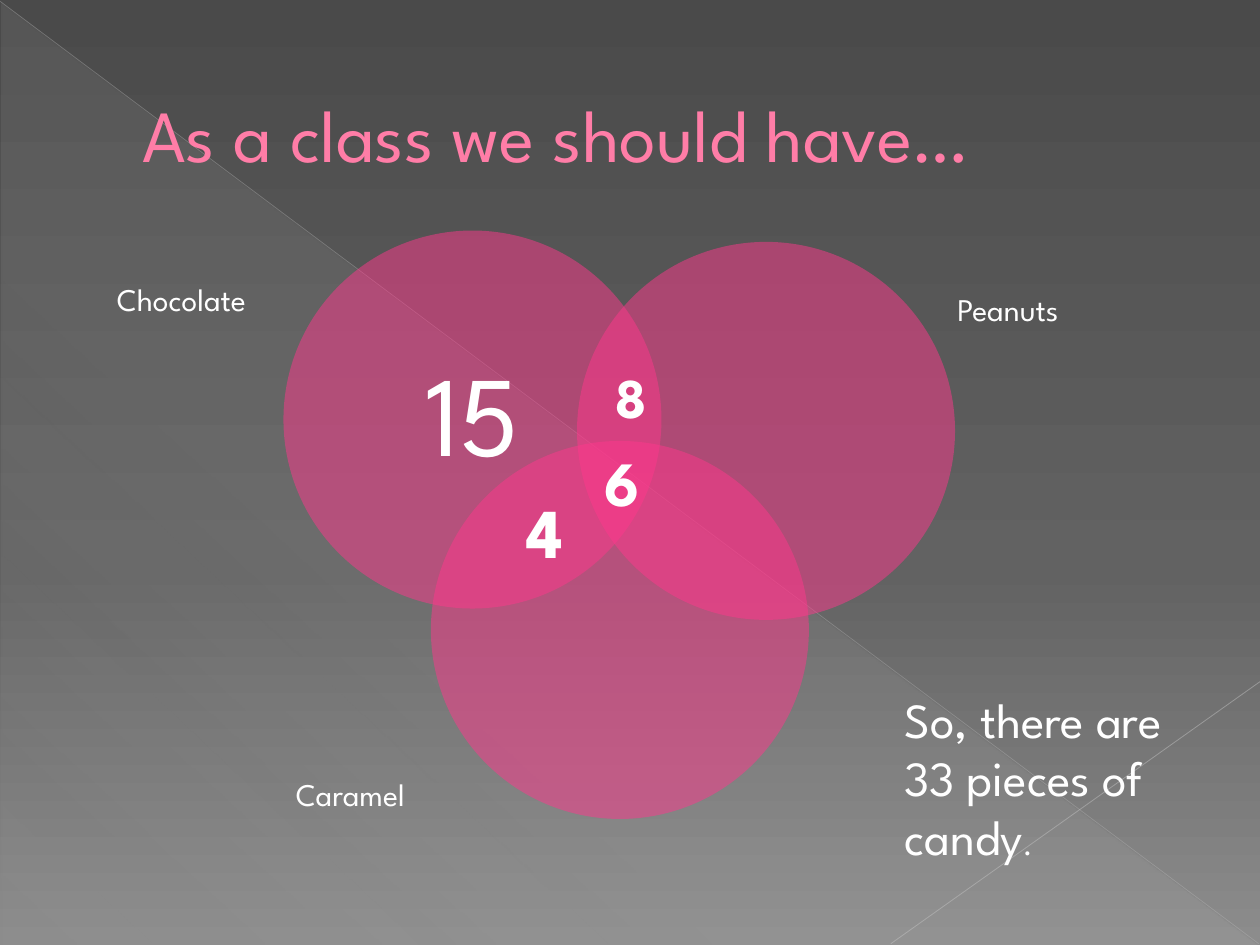
from pptx import Presentation
from pptx.dml.color import RGBColor
from pptx.enum.shapes import MSO_CONNECTOR, MSO_SHAPE
from pptx.enum.text import MSO_ANCHOR, PP_ALIGN
from pptx.oxml.ns import qn
from pptx.util import Inches, Pt
from lxml.etree import SubElement

FONT = "League Spartan"
WHITE = "FFFFFF"
PINK = "FF388C"
TITLE_PINK = "FF7DA7"


def color(value):
    return RGBColor.from_string(value)


def set_opacity(element, percent):
    for node in element.xpath(".//a:solidFill/a:srgbClr"):
        SubElement(node, qn("a:alpha")).set("val", str(percent * 1000))


def set_gradient(fill, element, stops, angle):
    fill.gradient()
    gradient = element.xpath(".//a:gradFill")[0]
    for child in list(gradient):
        gradient.remove(child)
    stop_list = SubElement(gradient, qn("a:gsLst"))
    for position, value, opacity in stops:
        stop = SubElement(stop_list, qn("a:gs"), pos=str(position * 1000))
        node = SubElement(stop, qn("a:srgbClr"), val=value)
        SubElement(node, qn("a:alpha"), val=str(opacity * 1000))
    SubElement(gradient, qn("a:lin"), ang=str(angle * 60000), scaled="0")


def add_text(shapes, box, runs, bold=False, text_color=WHITE):
    shape = shapes.add_textbox(*map(Inches, box))
    frame = shape.text_frame
    frame.word_wrap = True
    paragraph = frame.paragraphs[0]
    for text, size in runs:
        run = paragraph.add_run()
        run.text = text
        run.font.name = FONT
        run.font.size = Pt(size)
        run.font.bold = bold
        run.font.color.rgb = color(text_color)
    return frame


def add_plain_shape(shapes, kind, box):
    shape = shapes.add_shape(kind, *map(Inches, box))
    shape.shadow.inherit = False
    shape.line.fill.background()
    return shape


def add_line(shapes, start, end, line_color, width, opacity):
    line = shapes.add_connector(MSO_CONNECTOR.STRAIGHT, *map(Inches, start + end))
    line.line.color.rgb = color(line_color)
    line.line.width = Pt(width)
    properties = line._element.spPr
    set_opacity(properties, opacity)
    SubElement(properties, qn("a:effectLst"))


def add_backdrop(slide, box):
    left, top, width, height = box
    set_gradient(slide.background.fill, slide._element,
                 [(0, "4A4A4A", 100), (60, "626262", 100), (100, "8C8C8C", 100)], 90)
    triangle = add_plain_shape(slide.shapes, MSO_SHAPE.RIGHT_TRIANGLE,
                               (left + 0.01, top + 0.02, width - 0.02, height - 0.02))
    set_gradient(triangle.fill, triangle._element.spPr,
                 [(0, "D2D2D2", 10), (70, "D2D2D2", 8), (100, "D2D2D2", 1)], 133)
    right, bottom = left + width, top + height - 0.01
    add_line(slide.shapes, (left, top + 0.01), (right - 0.01, bottom), "BFBFBF", 0.39, 35)
    add_line(slide.shapes, (right, top + 5.41), (left + 7.07, bottom), "C6C6C6", 0.47, 45)


def add_title(slide, box):
    frame = add_text(slide.shapes, box, [("As a class we should have…", 42)],
                     text_color=TITLE_PINK)
    frame.vertical_anchor = MSO_ANCHOR.MIDDLE
    frame.paragraphs[0]._p.get_or_add_pPr().set("marL", str(Inches(0.53)))


def add_circle(shapes, box):
    circle = add_plain_shape(shapes, MSO_SHAPE.OVAL, box)
    circle.fill.solid()
    circle.fill.fore_color.rgb = color(PINK)
    set_opacity(circle._element.spPr, 50)


def add_circle_count(shapes, box, text):
    frame = add_text(shapes, box, [(text, 65)])
    frame.vertical_anchor = MSO_ANCHOR.MIDDLE
    frame.margin_left = frame.margin_right = Inches(0.27)
    frame.margin_top = frame.margin_bottom = Inches(0.27)
    frame.paragraphs[0].alignment = PP_ALIGN.CENTER
    frame.paragraphs[0].line_spacing = 0.9


def add_venn(slide, box):
    left, top, diameter = box
    circles = slide.shapes.add_group_shape().shapes
    add_circle(circles, (left, top, diameter, diameter))
    inset = 0.44
    side = diameter - 2 * inset
    add_circle_count(circles, (left + inset, top + inset, side, side), "15")
    for across, down in [(1.17, 1.67), (2.33, 0.09)]:
        add_circle(circles, (left + across, top + down, diameter, diameter))

    overlaps = [("8", 32, (2.54, 1, 0.25, 0.64)),
                ("6", 36, (2.45, 1.64, 0.38, 0.71)),
                ("4", 40, (1.83, 2, 0.33, 0.77))]
    labels = [("Chocolate", 18, (-1.42, 0.34, 1.58, 0.4)),
              ("Peanuts", 18, (5.25, 0.42, 1.67, 0.4)),
              ("Caramel", 18, (0, 4.27, 1.5, 0.4))]
    for items, bold in [(overlaps, True), (labels, False)]:
        for text, size, (across, down, width, height) in items:
            add_text(slide.shapes, (left + across, top + down, width, height),
                     [(text, size)], bold)


def add_conclusion(slide, box):
    add_text(slide.shapes, box, [("So, there are 33 pieces of candy", 28), (".", 18)])


def main():
    presentation = Presentation()
    presentation.slide_width = Inches(10)
    presentation.slide_height = Inches(7.5)
    slide = presentation.slides.add_slide(presentation.slide_layouts[6])
    add_backdrop(slide, (0, 0, 10, 7.5))
    add_title(slide, (0.5, 0.29, 9, 1.53))
    add_venn(slide, (2.25, 1.83, 3))
    add_conclusion(slide, (7.08, 5.42, 2.33, 1.99))
    presentation.save("out.pptx")


if __name__ == "__main__":
    main()
